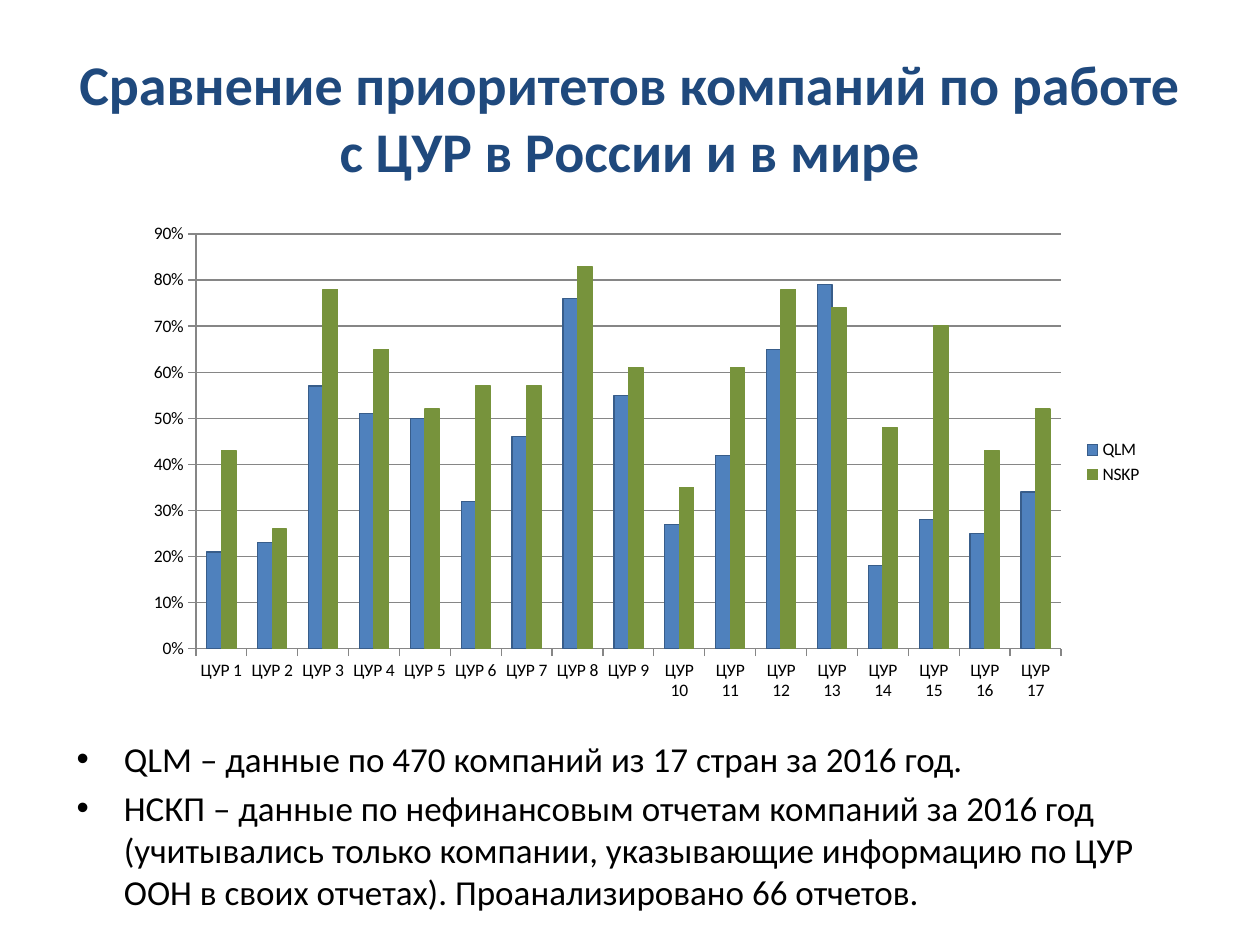
"""Build a slide comparing company priorities on the SDGs in Russia and worldwide."""
from lxml.etree import SubElement
from pptx import Presentation
from pptx.chart.data import CategoryChartData as ChartData
from pptx.dml.color import RGBColor
from pptx.enum.chart import XL_CHART_TYPE as Kind, XL_LEGEND_POSITION as Side
from pptx.enum.chart import XL_TICK_MARK as Tick
from pptx.enum.text import MSO_ANCHOR as Anchor, PP_ALIGN as Align
from pptx.oxml.ns import qn
from pptx.util import Pt

NAVY = RGBColor(0x1F, 0x49, 0x7D)
BLACK = RGBColor(0, 0, 0)
GRAY = RGBColor(0x86, 0x86, 0x86)
BLUE = RGBColor(0x4F, 0x81, 0xBD)
EDGE = RGBColor(0x38, 0x5D, 0x8A)
GREEN = RGBColor(0x77, 0x93, 0x3C)
FONT = "Calibri"


def add_box(left, top, width, height):
    box = slide.shapes.add_textbox(Pt(left), Pt(top), Pt(width), Pt(height))
    box.text_frame.word_wrap = True
    return box.text_frame


def add_run(para, text, size, color, bold=False):
    run = para.add_run()
    run.text = text
    font = run.font
    font.name, font.size, font.bold = FONT, Pt(size), bold
    font.color.rgb = color


deck = Presentation()
deck.slide_width, deck.slide_height = Pt(720), Pt(540)
slide = deck.slides.add_slide(deck.slide_layouts[6])

title = add_box(36, 21.6, 648, 90)
title.vertical_anchor = Anchor.MIDDLE
head = title.paragraphs[0]
head.alignment = Align.CENTER
add_run(head, "Сравнение приоритетов компаний по работе с ЦУР в России и в мире", 32, NAVY, True)

notes = [
    "QLM – данные по 470 компаний из 17 стран за 2016 год.",
    "НСКП – данные по нефинансовым отчетам компаний за 2016 год "
    "(учитывались только компании, указывающие информацию по ЦУР ООН "
    "в своих отчетах). Проанализировано 66 отчетов.",
]
body = add_box(36.72, 417.6, 648, 104.4)
for num, note in enumerate(notes):
    para = body.add_paragraph() if num else body.paragraphs[0]
    para.space_before = Pt(4)
    props = para._p.get_or_add_pPr()
    props.set("marL", str(Pt(27)))
    props.set("indent", str(-Pt(27)))
    SubElement(props, qn("a:buFont"), typeface="Arial")
    SubElement(props, qn("a:buChar"), char="•")
    add_run(para, note, 20, BLACK)

series = [
    ("QLM", BLUE, EDGE, [0.21, 0.23, 0.57, 0.51, 0.5, 0.32, 0.46, 0.76, 0.55,
                         0.27, 0.42, 0.65, 0.79, 0.18, 0.28, 0.25, 0.34]),
    ("NSKP", GREEN, GREEN, [0.43, 0.26, 0.78, 0.65, 0.52, 0.57, 0.57, 0.83, 0.61,
                            0.35, 0.61, 0.78, 0.74, 0.48, 0.7, 0.43, 0.52]),
]
data = ChartData(number_format="0%")
data.categories = [f"ЦУР {goal}" for goal in range(1, 18)]
for name, _, _, vals in series:
    data.add_series(name, vals)
chart = slide.shapes.add_chart(Kind.COLUMN_CLUSTERED, Pt(76.32), Pt(122.4),
                               Pt(583.92), Pt(283.68), data).chart
chart.has_title = False
chart.font.name, chart.font.size = FONT, Pt(10)
chart.font.color.rgb = BLACK
chart.has_legend = True
chart.legend.position = Side.RIGHT
chart.legend.include_in_layout = False

plot = chart.plots[0]
plot.vary_by_categories = False
plot.gap_width, plot.overlap = 150, 0
for bars, (_, fill, edge, _) in zip(plot.series, series):
    bars.format.fill.solid()
    bars.format.fill.fore_color.rgb = fill
    bars.format.line.color.rgb = edge
    bars.format.line.width = Pt(0.75)

scale = chart.value_axis
scale.minimum_scale, scale.maximum_scale, scale.major_unit = 0, 0.9, 0.1
scale.has_major_gridlines = True
scale.tick_labels.number_format = "0%"
scale.tick_labels.number_format_is_linked = False
for axis in (chart.category_axis, scale):
    axis.major_tick_mark = Tick.OUTSIDE
for part in (chart.category_axis, scale, scale.major_gridlines):
    part.format.line.color.rgb = GRAY
    part.format.line.width = Pt(0.75)

deck.save("out.pptx")
